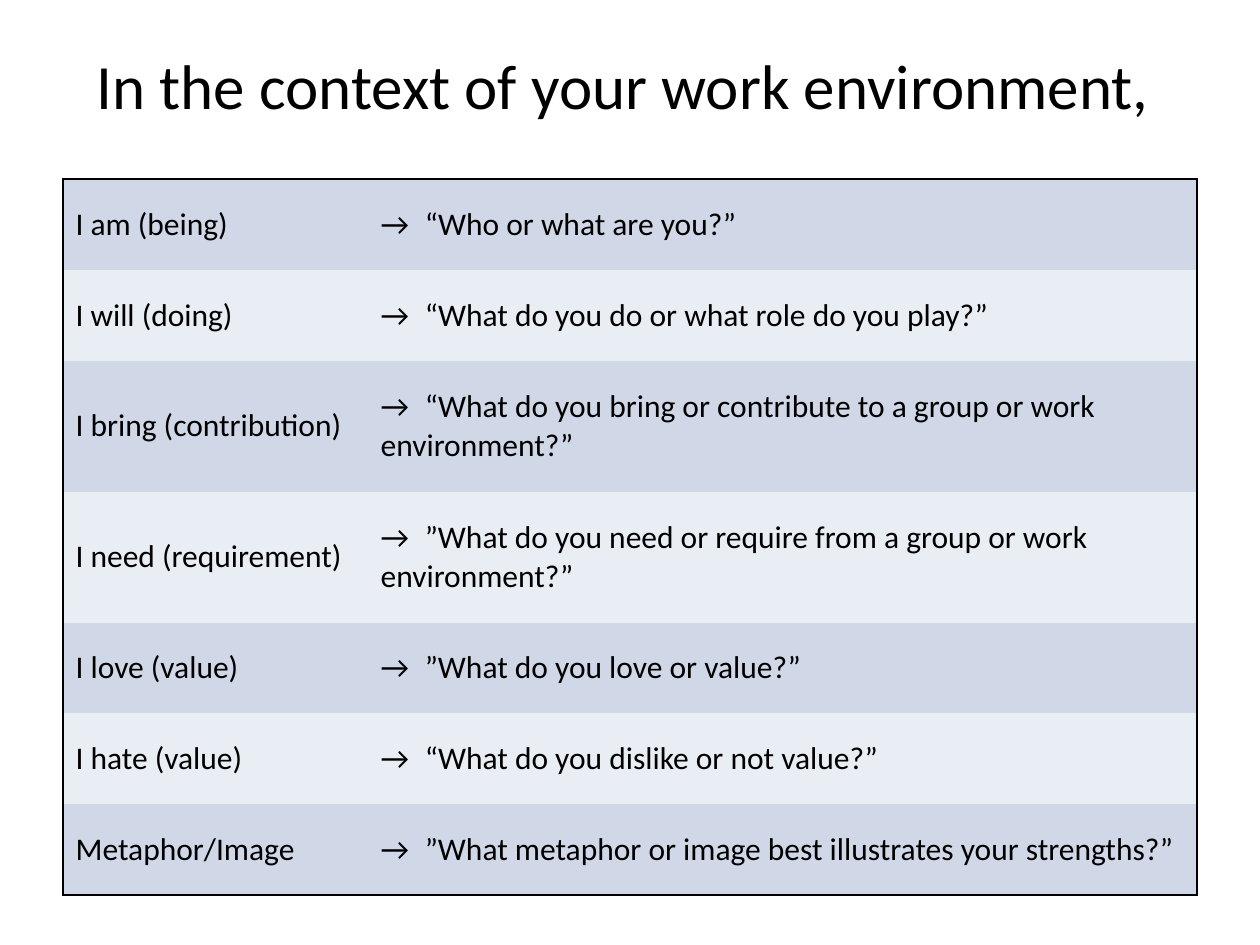
import dataclasses

import lxml.etree
import pptx
import pptx.dml.color
import pptx.enum.text
import pptx.oxml.ns
import pptx.util

Cm = pptx.util.Cm
Pt = pptx.util.Pt
qn = pptx.oxml.ns.qn


@dataclasses.dataclass(frozen=True)
class Theme:
    font: str = "Calibri"
    title_size: int = 36
    body_size: int = 18
    ink: str = "000000"
    bands: tuple[str, str] = ("D0D8E8", "E9EDF4")
    border_width: int = 1


@dataclasses.dataclass(frozen=True)
class Prompt:
    label: str
    question: str
    height: float = 1.83


THEME = Theme()
TWO_LINES = 2.64
COL_WIDTHS = (6.15, 16.71)
ARROW_TAB = 0.89

PROMPTS = (
    Prompt("I am (being)", "“Who or what are you?”"),
    Prompt("I will (doing)", "“What do you do or what role do you play?”"),
    Prompt("I bring (contribution)",
           "“What do you bring or contribute to a group or work environment?”", TWO_LINES),
    Prompt("I need (requirement)",
           "”What do you need or require from a group or work environment?”", TWO_LINES),
    Prompt("I love (value)", "”What do you love or value?”"),
    Prompt("I hate (value)", "“What do you dislike or not value?”"),
    Prompt("Metaphor/Image", "”What metaphor or image best illustrates your strengths?”"),
)


def rgb(value: str) -> pptx.dml.color.RGBColor:
    return pptx.dml.color.RGBColor.from_string(value)


def set_all(target, values: dict) -> None:
    for name, value in values.items():
        setattr(target, name, value)


def write(p, text: str, size: int) -> None:
    r = p.add_run()
    r.text = text
    set_all(r.font, {"name": THEME.font, "size": Pt(size), "bold": False})
    r.font.color.rgb = rgb(THEME.ink)


def add_tab(p, position: float) -> None:
    tabs = lxml.etree.SubElement(p._p.get_or_add_pPr(), qn("a:tabLst"))
    lxml.etree.SubElement(tabs, qn("a:tab"), pos=str(Cm(position)), algn="l")


def set_borders(cell, outer: dict[str, bool]) -> None:
    """Rule the outer edges of the table and leave inner edges open."""
    tc_pr = cell._tc.get_or_add_tcPr()
    for i, (side, ruled) in enumerate(outer.items()):
        ln = lxml.etree.Element(qn(f"a:ln{side}"), w=str(Pt(THEME.border_width)))
        if ruled:
            fill = lxml.etree.SubElement(ln, qn("a:solidFill"))
            lxml.etree.SubElement(fill, qn("a:srgbClr"), val=THEME.ink)
        else:
            lxml.etree.SubElement(ln, qn("a:noFill"))
        tc_pr.insert(i, ln)


def add_title(s, text: str) -> None:
    sp = s.shapes.title
    set_all(sp, {"left": Cm(1.27), "top": Cm(0.43), "width": Cm(22.86), "height": Cm(2.54)})
    tf = sp.text_frame
    set_all(tf, {"word_wrap": True, "vertical_anchor": pptx.enum.text.MSO_ANCHOR.MIDDLE})
    p = tf.paragraphs[0]
    p.alignment = pptx.enum.text.PP_ALIGN.CENTER
    write(p, text, THEME.title_size)


def add_prompts(s, prompts: tuple[Prompt, ...]) -> None:
    height = sum(prompt.height for prompt in prompts)
    table = s.shapes.add_table(len(prompts), len(COL_WIDTHS), Cm(1.27), Cm(3.61),
                               Cm(sum(COL_WIDTHS)), Cm(height)).table
    set_all(table, {"first_row": False, "horz_banding": False})
    for column, width in zip(table.columns, COL_WIDTHS):
        column.width = Cm(width)
    for i, prompt in enumerate(prompts):
        table.rows[i].height = Cm(prompt.height)
        for j, text in enumerate((prompt.label, f"→\t{prompt.question}")):
            cell = table.cell(i, j)
            cell.vertical_anchor = pptx.enum.text.MSO_ANCHOR.MIDDLE
            cell.fill.solid()
            cell.fill.fore_color.rgb = rgb(THEME.bands[i % 2])
            set_borders(cell, {"L": j == 0, "R": j == len(COL_WIDTHS) - 1,
                               "T": i == 0, "B": i == len(prompts) - 1})
            p = cell.text_frame.paragraphs[0]
            if j == 1:
                add_tab(p, ARROW_TAB)
            write(p, text, THEME.body_size)


def main() -> None:
    prs = pptx.Presentation()
    set_all(prs, {"slide_width": Cm(25.4), "slide_height": Cm(19.05)})
    s = prs.slides.add_slide(prs.slide_layouts.get_by_name("Title Only"))
    add_title(s, "In the context of your work environment, ")
    add_prompts(s, PROMPTS)
    prs.save("out.pptx")


if __name__ == "__main__":
    main()
